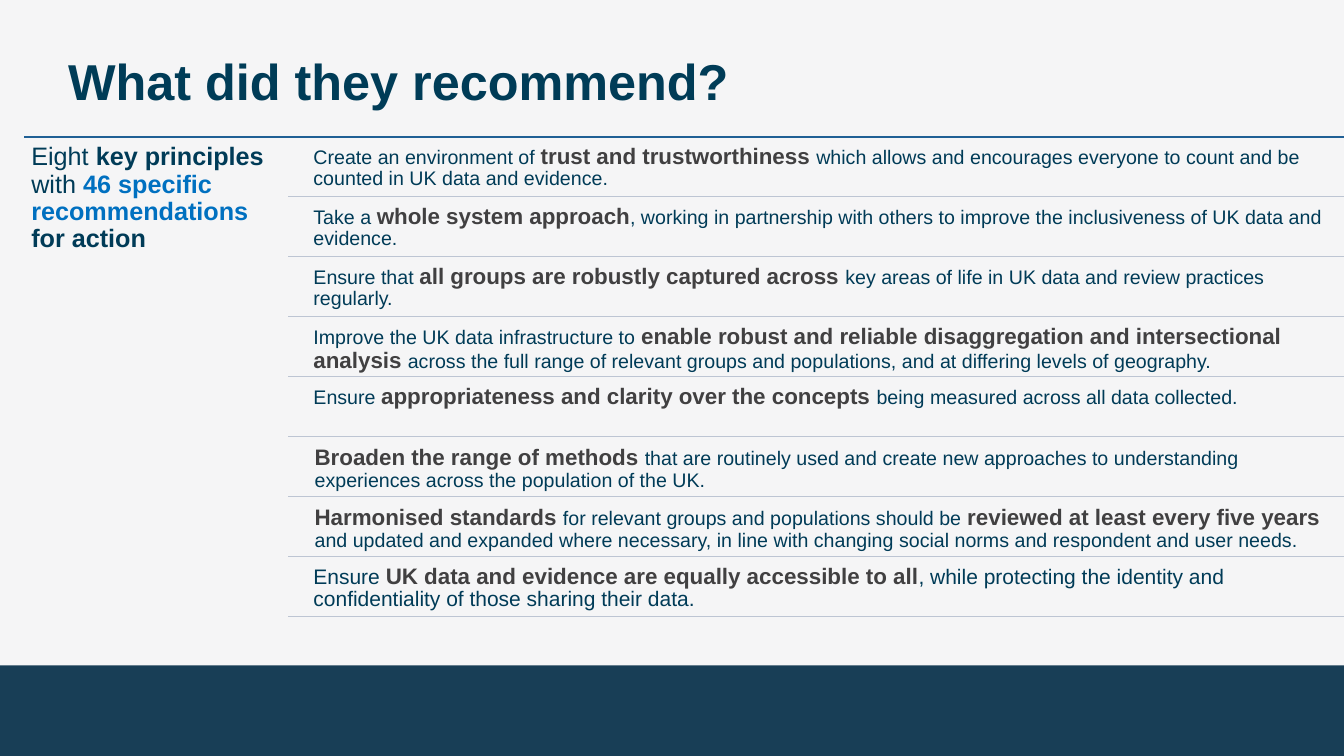
import dataclasses

import pptx
import pptx.dml.color
import pptx.enum.shapes
import pptx.enum.text
import pptx.util
from lxml import etree

Cm = pptx.util.Cm
Pt = pptx.util.Pt
RGB = pptx.dml.color.RGBColor.from_string


@dataclasses.dataclass(frozen=True)
class Theme:
    font: str = "Arial"
    background: str = "F5F5F6"
    footer: str = "183E56"
    title: str = "003C57"
    body: str = "003B57"
    strong: str = "414041"
    accent: str = "0070C0"
    top_rule: str = "206095"
    row_rule: str = "BDC5D3"
    title_size: int = 36
    summary_size: int = 18
    strong_size: int = 16
    body_size: int = 14
    last_size: int = 15


THEME = Theme()
SLIDE_W, SLIDE_H = 33.87, 19.05


def plain(text, size=THEME.body_size):
    return text, size, THEME.body, False


def strong(text):
    return text, THEME.strong_size, THEME.strong, True


SUMMARY = [
    plain("Eight ", THEME.summary_size),
    ("key principles ", THEME.summary_size, THEME.body, True),
    plain("with ", THEME.summary_size),
    ("46 specific recommendations ", THEME.summary_size, THEME.accent, True),
    ("for action", THEME.summary_size, THEME.body, True),
]

# Each principle: text inset in cm, then its runs
PRINCIPLES = [
    (0.15, [plain("Create an environment of "),
            strong("trust and trustworthiness "),
            plain("which allows and encourages everyone to count and be "
                  "counted in UK data and evidence.")]),
    (0.15, [plain("Take a "),
            strong("whole system approach"),
            plain(", working in partnership with others to improve the "
                  "inclusiveness of UK data and evidence.")]),
    (0.15, [plain("Ensure that "),
            strong("all groups are robustly captured across "),
            plain("key areas of life in UK data and review practices regularly.")]),
    (0.15, [plain("Improve the UK data infrastructure to "),
            strong("enable robust and reliable disaggregation and "
                   "intersectional analysis "),
            plain("across the full range of relevant groups and populations, "
                  "and at differing levels of geography.")]),
    (0.15, [plain("Ensure "),
            strong("appropriateness and clarity over the concepts "),
            plain("being measured across all data collected.")]),
    (0.18, [strong("Broaden the range of methods "),
            plain("that are routinely used and create new approaches to "
                  "understanding experiences across the population of the UK.")]),
    (0.18, [strong("Harmonised standards "),
            plain("for relevant groups and populations should be "),
            strong("reviewed at least every five years "),
            plain("and updated and expanded where necessary, in line with "
                  "changing social norms and respondent and user needs.")]),
    (0.15, [plain("Ensure ", THEME.last_size),
            strong("UK data and evidence are equally accessible to all"),
            plain(", while protecting the identity and confidentiality of "
                  "those sharing their data.", THEME.last_size)]),
]


def add_text(slide, box, runs, inset, spacing=0.9,
             anchor=pptx.enum.text.MSO_ANCHOR.TOP):
    tf = slide.shapes.add_textbox(*map(Cm, box)).text_frame
    tf.word_wrap = True
    tf.vertical_anchor = anchor
    tf.margin_left = tf.margin_right = Cm(inset)
    tf.margin_top = tf.margin_bottom = Cm(inset)
    p = tf.paragraphs[0]
    p.line_spacing = spacing
    for text, size, color, bold in runs:
        r = p.add_run()
        r.text = text
        r.font.name = THEME.font
        r.font.size = Pt(size)
        r.font.bold = bold
        r.font.color.rgb = RGB(color)


def add_rule(slide, left, right, y, color):
    line = slide.shapes.add_connector(
        pptx.enum.shapes.MSO_CONNECTOR.STRAIGHT, Cm(left), Cm(y), Cm(right), Cm(y))
    line.line.color.rgb = RGB(color)
    line.line.width = Pt(1)
    etree.SubElement(line._element.spPr, pptx.oxml.ns.qn("a:effectLst"))


def add_footer(slide, box):
    sp = slide.shapes.add_shape(
        pptx.enum.shapes.MSO_SHAPE.RECTANGLE, *map(Cm, box))
    sp.shadow.inherit = False
    sp.fill.solid()
    sp.fill.fore_color.rgb = RGB(THEME.footer)
    sp.line.fill.background()


def add_title(slide, box):
    title = ("What did they recommend?", THEME.title_size, THEME.title, True)
    add_text(slide, box, [title], 0.25, 0.95, pptx.enum.text.MSO_ANCHOR.MIDDLE)


def add_summary(slide, box):
    left, top, width, height = box
    add_rule(slide, left, SLIDE_W, top, THEME.top_rule)
    add_text(slide, box, SUMMARY, 0.18)


def add_principles(slide, box):
    """Stack the principles in equal rows, each closed by a rule."""
    left, top, width, height = box
    pitch = height / len(PRINCIPLES)
    indent, gap = 0.49, 0.06
    for i, (inset, runs) in enumerate(PRINCIPLES):
        y = top + i * pitch
        add_text(slide, (left + indent, y + gap, width - indent, pitch - gap),
                 runs, inset)
        add_rule(slide, left, left + width, y + pitch, THEME.row_rule)


def build_slide(prs):
    slide = prs.slides.add_slide(prs.slide_layouts[6])
    slide.background.fill.solid()
    slide.background.fill.fore_color.rgb = RGB(THEME.background)
    add_footer(slide, (0, 16.77, SLIDE_W, SLIDE_H - 16.77))
    add_title(slide, (1.47, 0.18, 24.64, 3.86))
    add_summary(slide, (0.61, 3.45, 6.65, 12.17))
    add_principles(slide, (7.26, 3.44, SLIDE_W - 7.26, 12.09))


def main():
    prs = pptx.Presentation()
    prs.slide_width, prs.slide_height = Cm(SLIDE_W), Cm(SLIDE_H)
    build_slide(prs)
    prs.save("out.pptx")


if __name__ == "__main__":
    main()
